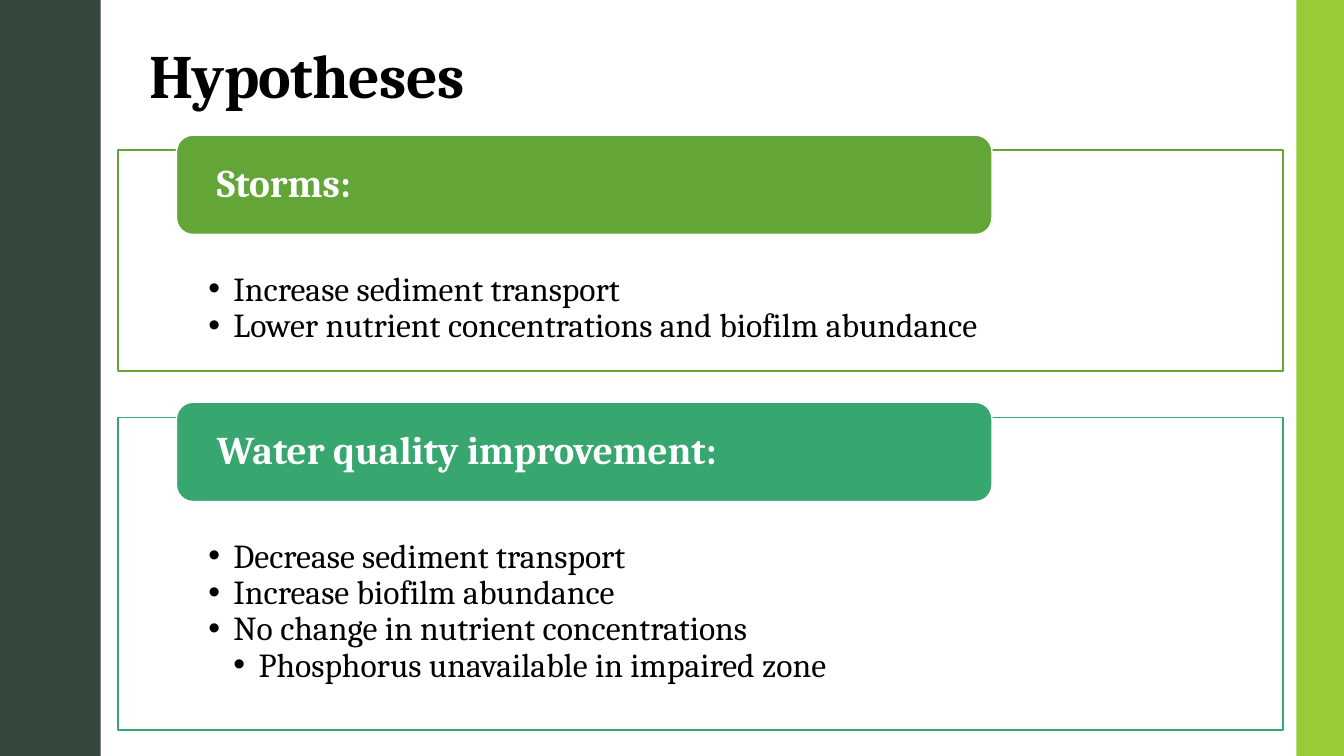
from lxml import etree
from pptx import Presentation
from pptx.dml.color import RGBColor
from pptx.enum import shapes, text
from pptx.oxml import ns
from pptx.util import Pt

WHITE = RGBColor(0xFF, 0xFF, 0xFF)
BLACK = RGBColor(0, 0, 0)
SLATE = RGBColor(0x34, 0x47, 0x3D)
LIME = RGBColor(0x99, 0xCB, 0x38)
GREEN = RGBColor(0x63, 0xA5, 0x37)
TEAL = RGBColor(0x37, 0xA7, 0x6F)

FONT = "Cambria"
WIDTH, HEIGHT = 960, 540
INDENT = 18

PANELS = [
    (107.3, 157.7, GREEN, "Storms:", [
        (1, "Increase sediment transport"),
        (1, "Lower nutrient concentrations and biofilm abundance"),
    ]),
    (298.1, 223.2, TEAL, "Water quality improvement:", [
        (1, "Decrease sediment transport"),
        (1, "Increase biofilm abundance"),
        (1, "No change in nutrient concentrations"),
        (2, "Phosphorus unavailable in impaired zone"),
    ]),
]


def add_box(slide, kind, box, fill, line=None):
    s = slide.shapes.add_shape(kind, *map(Pt, box))
    s.shadow.inherit = False
    s.fill.solid()
    s.fill.fore_color.rgb = fill
    if line is None:
        s.line.fill.background()
    else:
        s.line.color.rgb = line
        s.line.width = Pt(1.1)
    return s


def set_frame(tf, anchor, left, top, right, bottom):
    tf.word_wrap = True
    tf.auto_size = text.MSO_AUTO_SIZE.NONE
    tf.vertical_anchor = anchor
    tf.margin_left, tf.margin_top = Pt(left), Pt(top)
    tf.margin_right, tf.margin_bottom = Pt(right), Pt(bottom)


def format_paragraph(p, size, color, bold=False):
    p.alignment = text.PP_ALIGN.LEFT
    p.line_spacing = 0.9
    for r in p.runs:
        r.font.name = FONT
        r.font.size = Pt(size)
        r.font.bold = bold
        r.font.color.rgb = color


def add_bullet(p, level):
    p.level = level
    pPr = p._p.get_or_add_pPr()
    pPr.set("marL", str(Pt(INDENT * level)))
    pPr.set("indent", str(Pt(-INDENT)))
    etree.SubElement(pPr, ns.qn("a:buFont")).set("typeface", "Arial")
    etree.SubElement(pPr, ns.qn("a:buChar")).set("char", "•")


def add_title(slide, box, title):
    s = slide.shapes.title
    s.left, s.top, s.width, s.height = map(Pt, box)
    tf = s.text_frame
    tf.text = title
    set_frame(tf, text.MSO_ANCHOR.BOTTOM, 7.2, 3.6, 7.2, 3.6)
    p = tf.paragraphs[0]
    format_paragraph(p, 44, BLACK, True)
    p.runs[0].font._element.set("spc", "-50")


def add_side_bands(slide, left_width, right_width):
    rect = shapes.MSO_SHAPE.RECTANGLE
    add_box(slide, rect, (0, 0, left_width, HEIGHT), SLATE)
    add_box(slide, rect, (WIDTH - right_width, 0, right_width, HEIGHT), LIME)


def add_panel(slide, box, color, heading, items):
    left, top, width, height = box
    frame = add_box(slide, shapes.MSO_SHAPE.RECTANGLE, box, WHITE, color)
    tf = frame.text_frame
    set_frame(tf, text.MSO_ANCHOR.TOP, 64.6, 87.1, 64.6, 13.7)
    tf.text = "\n".join(item for _, item in items)
    for p, (level, _) in zip(tf.paragraphs, items):
        add_bullet(p, level)
        format_paragraph(p, 24, BLACK)

    header = add_box(slide, shapes.MSO_SHAPE.ROUNDED_RECTANGLE,
                     (left + 41.8, top - 10.8, 0.7 * width, 71), color, WHITE)
    tf = header.text_frame
    set_frame(tf, text.MSO_ANCHOR.MIDDLE, 25.5, 0, 25.5, 0)
    tf.text = heading
    format_paragraph(tf.paragraphs[0], 28, WHITE, True)


def main():
    prs = Presentation()
    prs.slide_width, prs.slide_height = Pt(WIDTH), Pt(HEIGHT)
    slide = prs.slides.add_slide(prs.slide_layouts[5])
    slide.background.fill.solid()
    slide.background.fill.fore_color.rgb = WHITE
    add_title(slide, (99.4, 0, 776.2, 83.5), "Hypotheses")
    add_side_bands(slide, 72, 34)
    for top, height, color, heading, items in PANELS:
        add_panel(slide, (84.2, top, 832.3, height), color, heading, items)
    prs.save("out.pptx")


if __name__ == "__main__":
    main()
